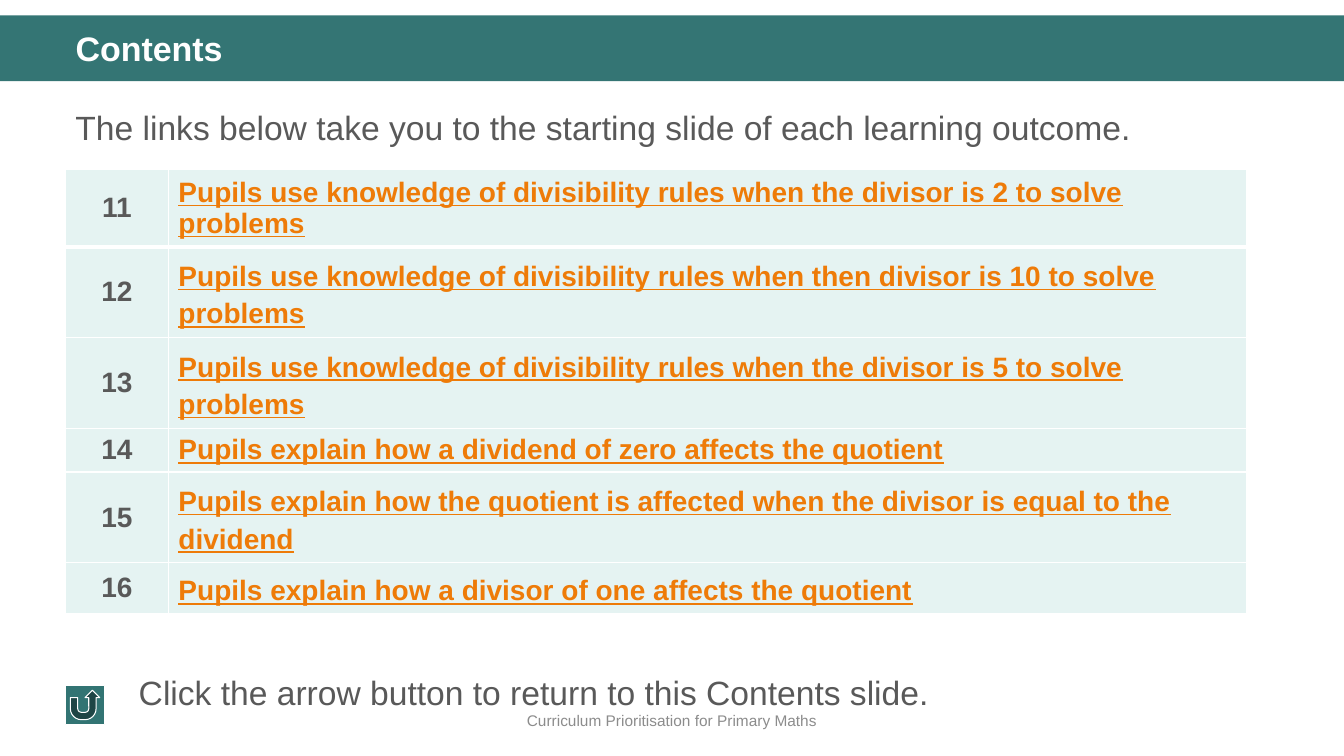
from dataclasses import dataclass

from lxml.etree import SubElement
from pptx import Presentation
from pptx.dml.color import RGBColor
from pptx.enum.shapes import MSO_SHAPE as Preset
from pptx.enum.text import MSO_ANCHOR as Anchor, MSO_AUTO_SIZE as AutoSize, PP_ALIGN as Align
from pptx.oxml.ns import qn
from pptx.util import Pt


@dataclass(frozen=True)
class Theme:
    font: str = "Arial"
    band: str = "347574"
    button: str = "327473"
    cell: str = "E5F3F2"
    white: str = "FFFFFF"
    text: str = "595959"
    link: str = "EE7B08"
    footer: str = "8C8C8C"
    title_size: float = 24.3
    body_size: float = 24
    table_size: float = 20
    footer_size: float = 11


@dataclass(frozen=True)
class Box:
    left: float
    top: float
    width: float
    height: float

    def lengths(self) -> tuple:
        return Pt(self.left), Pt(self.top), Pt(self.width), Pt(self.height)


@dataclass(frozen=True)
class TextStyle:
    size: float
    color: str
    bold: bool = False
    underline: bool = False
    align: Align = Align.LEFT
    line_spacing: float = 1.0
    space_before: float = 0


@dataclass(frozen=True)
class Outcome:
    number: int
    text: str
    height: float
    line_spacing: float = 1.2


THEME = Theme()
MARGIN = 46.8
COLUMN_WIDTHS = (73.5, 770)
OUTCOMES = (
    Outcome(11, "Pupils use knowledge of divisibility rules when the divisor is 2 to solve problems", 51, 1.0),
    Outcome(12, "Pupils use knowledge of divisibility rules when then divisor is 10 to solve problems", 60.5),
    Outcome(13, "Pupils use knowledge of divisibility rules when the divisor is 5 to solve problems", 60.5),
    Outcome(14, "Pupils explain how a dividend of zero affects the quotient", 30, 1.0),
    Outcome(15, "Pupils explain how the quotient is affected when the divisor is equal to the dividend", 60.5),
    Outcome(16, "Pupils explain how a divisor of one affects the quotient", 33.5),
)


def write_text(frame, text: str, style: TextStyle) -> None:
    paragraph = frame.paragraphs[0]
    paragraph.alignment = style.align
    paragraph.line_spacing = style.line_spacing
    paragraph.space_before = Pt(style.space_before)
    run = paragraph.add_run()
    run.text = text
    font = run.font
    font.name = THEME.font
    font.size = Pt(style.size)
    font.bold = style.bold
    font.underline = style.underline
    font.color.rgb = RGBColor.from_string(style.color)


def add_text(slide, box: Box, text: str, style: TextStyle, anchor: Anchor = Anchor.TOP) -> None:
    frame = slide.shapes.add_textbox(*box.lengths()).text_frame
    frame.word_wrap = True
    frame.vertical_anchor = anchor
    write_text(frame, text, style)


def add_preset(slide, preset: Preset, box: Box, fill: str, line: str | None = None) -> None:
    shape = slide.shapes.add_shape(preset, *box.lengths())
    shape.shadow.inherit = False
    shape.fill.solid()
    shape.fill.fore_color.rgb = RGBColor.from_string(fill)
    if line is None:
        shape.line.fill.background()
    else:
        shape.line.color.rgb = RGBColor.from_string(line)
        shape.line.width = Pt(0.75)


def set_borders(cell, top: float, bottom: float) -> None:
    """Draw white cell borders; the sides are always 1 pt."""
    properties = cell._tc.get_or_add_tcPr()
    widths = {"a:lnL": 1, "a:lnR": 1, "a:lnT": top, "a:lnB": bottom}
    for position, (tag, width) in enumerate(widths.items()):
        line = SubElement(properties, qn(tag), w=str(Pt(width)))
        fill = SubElement(line, qn("a:solidFill"))
        SubElement(fill, qn("a:srgbClr"), val=THEME.white)
        properties.insert(position, line)


def add_outcome_table(slide) -> None:
    box = Box(MARGIN, 121, sum(COLUMN_WIDTHS), sum(outcome.height for outcome in OUTCOMES))
    table = slide.shapes.add_table(len(OUTCOMES), len(COLUMN_WIDTHS), *box.lengths()).table
    table.first_row = table.horz_banding = False
    for column, width in zip(table.columns, COLUMN_WIDTHS):
        column.width = Pt(width)
    for index, (row, outcome) in enumerate(zip(table.rows, OUTCOMES)):
        row.height = Pt(outcome.height)
        number_style = TextStyle(THEME.table_size, THEME.text, bold=True, align=Align.CENTER)
        link_style = TextStyle(THEME.table_size, THEME.link, bold=True, underline=True,
                               line_spacing=outcome.line_spacing)
        contents = ((str(outcome.number), number_style), (outcome.text, link_style))
        for cell, (text, style) in zip(row.cells, contents):
            cell.vertical_anchor = Anchor.MIDDLE
            cell.fill.solid()
            cell.fill.fore_color.rgb = RGBColor.from_string(THEME.cell)
            set_borders(cell, top=3 if index == 1 else 1, bottom=3 if index == 0 else 1)
            write_text(cell.text_frame, text, style)


def place_title(slide, box: Box, text: str) -> None:
    """Format the title placeholder and bring it in front of the band."""
    title = slide.shapes.title
    title.left, title.top, title.width, title.height = box.lengths()
    frame = title.text_frame
    frame.word_wrap = True
    frame.auto_size = AutoSize.NONE
    frame.vertical_anchor = Anchor.TOP
    write_text(frame, text, TextStyle(THEME.title_size, THEME.white, bold=True, line_spacing=0.9))
    slide.shapes._spTree.append(title._element)


def main() -> None:
    presentation = Presentation()
    presentation.slide_width, presentation.slide_height = Pt(960), Pt(540)
    slide = presentation.slides.add_slide(presentation.slide_layouts[5])

    add_preset(slide, Preset.RECTANGLE, Box(0, 11, 960, 47), THEME.band)
    add_text(slide, Box(0, 500.4, 960, 28.8), "Curriculum Prioritisation for Primary Maths",
             TextStyle(THEME.footer_size, THEME.footer, align=Align.CENTER), Anchor.MIDDLE)
    add_text(slide, Box(MARGIN, 67, 877, 252.7),
             "The links below take you to the starting slide of each learning outcome.",
             TextStyle(THEME.body_size, THEME.text, line_spacing=1.2, space_before=10))
    add_outcome_table(slide)
    add_preset(slide, Preset.ACTION_BUTTON_RETURN, Box(MARGIN, 489.6, 28, 28), THEME.button, THEME.white)
    add_text(slide, Box(92, 476.6, 815, 36), "Click the arrow button to return to this Contents slide.",
             TextStyle(THEME.body_size, THEME.text))
    place_title(slide, Box(MARGIN, 19.4, 877, 33.8), "Contents")

    presentation.save("out.pptx")


if __name__ == "__main__":
    main()
